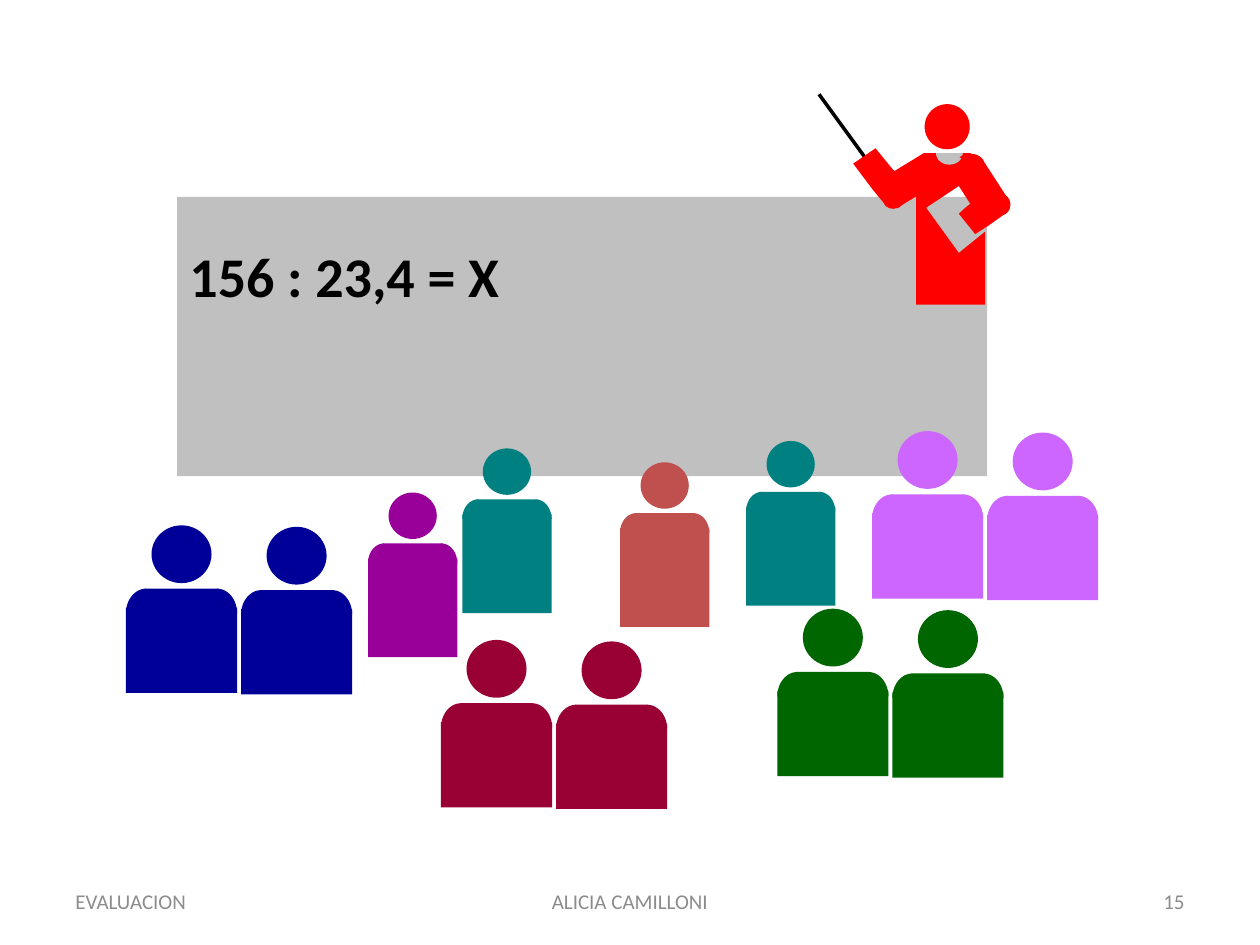
import math
from lxml import etree
from pptx import Presentation
from pptx import util as u
from pptx.dml.color import RGBColor
from pptx.enum import shapes, text
from pptx.oxml.ns import qn

COLOURS = {
    "board": "C0C0C0", "ink": "000000", "footer": "8C8C8C", "teacher": "FF0000",
    "teal": "008080", "brick": "C0504D", "purple": "990099", "wine": "990033",
    "green": "006600", "lilac": "CC66FF", "navy": "000099",
}
FONT = "Calibri"
OVAL, RECT = shapes.MSO_SHAPE.OVAL, shapes.MSO_SHAPE.RECTANGLE
SINGLE, PAIRED = (1.8, 3.32), (2.24, 3.38)
PAIR_STEP = (2.32, 0.03)

SINGLE_PUPILS = [
    (15.04, 8.89, "teal"), (12.5, 9.32, "brick"),
    (9.32, 9.04, "teal"), (7.42, 9.93, "purple"),
]
PUPIL_PAIRS = [
    (8.89, 12.9, "wine"), (15.67, 12.27, "green"),
    (17.58, 8.69, "lilac"), (2.54, 10.59, "navy"),
]
TEACHER_BODY = [
    (2.87, 1.19), (3.05, 1.19), (3.3, 1.32), (3.78, 2.06), (3.78, 2.39),
    (3.43, 2.64), (3.15, 2.82), (2.82, 2.41), (2.95, 2.29), (3.05, 2.21),
    (2.82, 1.85), (2.16, 2.29), (2.82, 3.2), (3.35, 2.77), (3.35, 4.24),
    (1.96, 4.24), (1.96, 2.06), (1.63, 2.26), (1.35, 2.26), (1.32, 2.21),
    (1.09, 1.93), (0.69, 1.4), (1.14, 1.09), (1.45, 1.47), (1.52, 1.55),
    (2.11, 1.19), (2.36, 1.19),
]


def paint(part, colour):
    part.shadow.inherit = False
    part.fill.solid()
    part.fill.fore_color.rgb = RGBColor.from_string(COLOURS[colour])
    part.line.fill.background()
    return part


def solid(parts, preset, box, colour):
    return paint(parts.add_shape(preset, *map(u.Cm, box)), colour)


def outline(parts, points, colour):
    start, *rest = [(u.Cm(x), u.Cm(y)) for x, y in points]
    builder = parts.build_freeform(*start, scale=1.0)
    builder.add_line_segments(rest, close=True)
    return paint(builder.convert_to_shape(), colour)


def sector(parts, centre, radii, start, end, colour):
    angles = [math.radians(start + (end - start) * i / 16) for i in range(17)]
    arc = [(centre[0] + radii[0] * math.cos(a), centre[1] + radii[1] * math.sin(a))
           for a in angles]
    outline(parts, arc + [centre], colour)


def write(frame, words, size, colour, align, bold=False):
    frame.word_wrap = True
    paragraph = frame.paragraphs[0]
    paragraph.text = words
    paragraph.alignment = align
    font = paragraph.runs[0].font
    font.name, font.size, font.bold = FONT, u.Pt(size), bold
    font.color.rgb = RGBColor.from_string(COLOURS[colour])


def add_board(slide, box):
    frame = solid(slide.shapes, RECT, box, "board").text_frame
    frame.vertical_anchor = text.MSO_ANCHOR.TOP
    frame.margin_top = u.Cm(0.9)
    write(frame, "156 : 23,4 = X", 32, "ink", text.PP_ALIGN.LEFT, bold=True)


def add_teacher(slide, left, top):
    parts = slide.shapes.add_group_shape().shapes
    pointer = parts.add_connector(
        shapes.MSO_CONNECTOR.STRAIGHT,
        *map(u.Cm, (left + 1.07, top + 1.47, left, top)))
    pointer.line.color.rgb = RGBColor.from_string(COLOURS["ink"])
    pointer.line.width = u.Pt(2)
    etree.SubElement(pointer.element.spPr, qn("a:effectLst"))

    outline(parts, [(left + x, top + y) for x, y in TEACHER_BODY], "teacher")
    right_elbow, head, left_elbow = (
        (1.3, 1.98, 0.41, 0.33), (2.13, 0.2, 0.91, 0.91), (3.48, 2.01, 0.38, 0.43))
    for x, y, width, height in (right_elbow, head, left_elbow):
        solid(parts, OVAL, (left + x, top + y, width, height), "teacher")
    sector(parts, (left + 2.63, top + 1.19), (0.27, 0.23), 0, 180, "board")
    sector(parts, (left + 3.05, top + 1.4), (0.28, 0.2), 220, 405, "teacher")


def add_pupil(parts, left, top, size, colour):
    width, height = size
    shoulder_top, body_top = top + 0.57 * width, top + 0.74 * width
    radii = (0.18 * width, 0.22 * width)
    solid(parts, OVAL, (left + 0.23 * width, top, 0.54 * width, 0.52 * width), colour)
    solid(parts, RECT,
          (left + 0.17 * width, shoulder_top, 0.66 * width, 0.26 * width), colour)
    solid(parts, RECT, (left, body_top, width, top + height - body_top), colour)
    for x, start in ((left + radii[0], 180), (left + width - radii[0], 270)):
        sector(parts, (x, shoulder_top + radii[1]), radii, start, start + 90, colour)


def add_class(slide):
    for left, top, colour in SINGLE_PUPILS:
        add_pupil(slide.shapes.add_group_shape().shapes, left, top, SINGLE, colour)
    for left, top, colour in PUPIL_PAIRS:
        parts = slide.shapes.add_group_shape().shapes
        for seat in (1, 0):
            add_pupil(parts, left + seat * PAIR_STEP[0], top + seat * PAIR_STEP[1],
                      PAIRED, colour)


def add_footer(slide, top, height):
    for words, left, width, align in (
        ("ALICIA CAMILLONI", 8.68, 8.04, text.PP_ALIGN.CENTER),
        ("15", 18.2, 5.93, text.PP_ALIGN.RIGHT),
        ("EVALUACION", 1.27, 5.93, text.PP_ALIGN.LEFT),
    ):
        frame = slide.shapes.add_textbox(
            *map(u.Cm, (left, top, width, height))).text_frame
        frame.vertical_anchor = text.MSO_ANCHOR.MIDDLE
        write(frame, words, 12, "footer", align)


def main():
    deck = Presentation()
    deck.slide_width, deck.slide_height = u.Cm(25.4), u.Cm(19.05)
    slide = deck.slides.add_slide(deck.slide_layouts[6])
    add_board(slide, (3.57, 3.97, 16.33, 5.63))
    add_teacher(slide, 16.51, 1.9)
    add_class(slide)
    add_footer(slide, 17.66, 1.01)
    deck.save("out.pptx")


if __name__ == "__main__":
    main()
